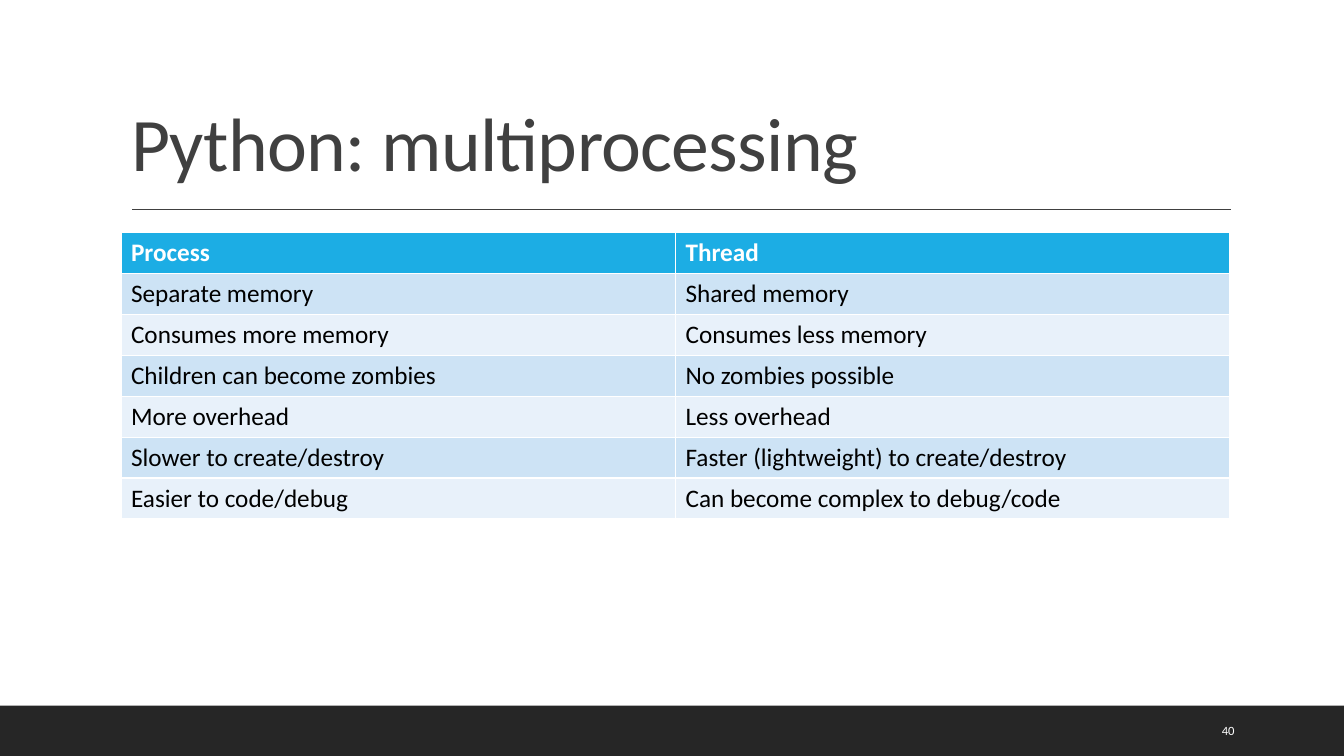
from dataclasses import dataclass

from lxml import etree
from pptx import Presentation
from pptx.dml.color import RGBColor
from pptx.enum.shapes import MSO_CONNECTOR, MSO_SHAPE
from pptx.enum.text import MSO_ANCHOR, MSO_AUTO_SIZE, PP_ALIGN
from pptx.oxml.ns import qn
from pptx.util import Inches, Pt

RECTANGLE = MSO_SHAPE.RECTANGLE
STRAIGHT = MSO_CONNECTOR.STRAIGHT
LEFT = PP_ALIGN.LEFT
BOTTOM, MIDDLE = MSO_ANCHOR.BOTTOM, MSO_ANCHOR.MIDDLE
NO_AUTOFIT = MSO_AUTO_SIZE.NONE
TITLE_ONLY = 5


@dataclass(frozen=True)
class Theme:
    font: str = "Calibri"
    title_size: int = 54
    table_size: int = 18
    number_size: int = 9
    dark: str = "404040"
    footer: str = "262626"
    white: str = "FFFFFF"
    black: str = "000000"
    header: str = "1CADE4"
    bands: tuple = ("CDE3F5", "E8F1FA")


THEME = Theme()

COMPARISON = [
    ("Process", "Thread"),
    ("Separate memory", "Shared memory"),
    ("Consumes more memory", "Consumes less memory"),
    ("Children can become zombies", "No zombies possible"),
    ("More overhead", "Less overhead"),
    ("Slower to create/destroy", "Faster (lightweight) to create/destroy"),
    ("Easier to code/debug", "Can become complex to debug/code"),
]


def rgb(color):
    return RGBColor.from_string(color)


def set_text(tf, text, size, color, bold=False):
    p = tf.paragraphs[0]
    p.text = text
    p.alignment = LEFT
    p.font.name = THEME.font
    p.font.size = Pt(size)
    p.font.bold = bold
    p.font.color.rgb = rgb(color)
    return p


def add_footer_bar(s):
    bar = s.shapes.add_shape(RECTANGLE, 0, Inches(7), Inches(13.33), Inches(0.5))
    bar.shadow.inherit = False
    bar.fill.solid()
    bar.fill.fore_color.rgb = rgb(THEME.footer)
    bar.line.fill.background()


def add_rule(s):
    rule = s.shapes.add_connector(
        STRAIGHT, Inches(1.31), Inches(2.08), Inches(12.21), Inches(2.08))
    rule.line.color.rgb = rgb(THEME.dark)
    rule.line.width = Pt(1)
    etree.SubElement(rule._element.spPr, qn("a:effectLst"))


def format_title(s, text):
    title = s.shapes.title
    title.left, title.top = Inches(1.2), Inches(0.31)
    title.width, title.height = Inches(11), Inches(1.59)
    tf = title.text_frame
    tf.auto_size = NO_AUTOFIT
    tf.word_wrap = True
    tf.vertical_anchor = BOTTOM
    p = set_text(tf, text, THEME.title_size, THEME.dark)
    p.line_spacing = 0.8
    # Slightly tightened letter spacing
    p.runs[0].font._element.set("spc", "-50")


def add_comparison_table(s, rows):
    # The default table style supplies the white cell borders
    table = s.shapes.add_table(
        len(rows), len(rows[0]),
        Inches(1.2), Inches(2.31), Inches(11), Inches(2.84)).table
    for i, row in enumerate(rows):
        is_header = i == 0
        fill = THEME.header if is_header else THEME.bands[(i - 1) % 2]
        color = THEME.white if is_header else THEME.black
        for j, text in enumerate(row):
            cell = table.cell(i, j)
            cell.fill.solid()
            cell.fill.fore_color.rgb = rgb(fill)
            set_text(cell.text_frame, text, THEME.table_size, color, is_header)


def add_slide_number(s, number):
    box = s.shapes.add_textbox(Inches(12.02), Inches(7.05), Inches(0.85), Inches(0.4))
    tf = box.text_frame
    tf.word_wrap = True
    tf.vertical_anchor = MIDDLE
    set_text(tf, number, THEME.number_size, THEME.white)


def main():
    prs = Presentation()
    prs.slide_width, prs.slide_height = Inches(13.33), Inches(7.5)
    s = prs.slides.add_slide(prs.slide_layouts[TITLE_ONLY])

    # Frame of the slide
    add_footer_bar(s)
    add_rule(s)
    add_slide_number(s, "40")

    # Content
    format_title(s, "Python: multiprocessing")
    add_comparison_table(s, COMPARISON)

    prs.save("out.pptx")


if __name__ == "__main__":
    main()
